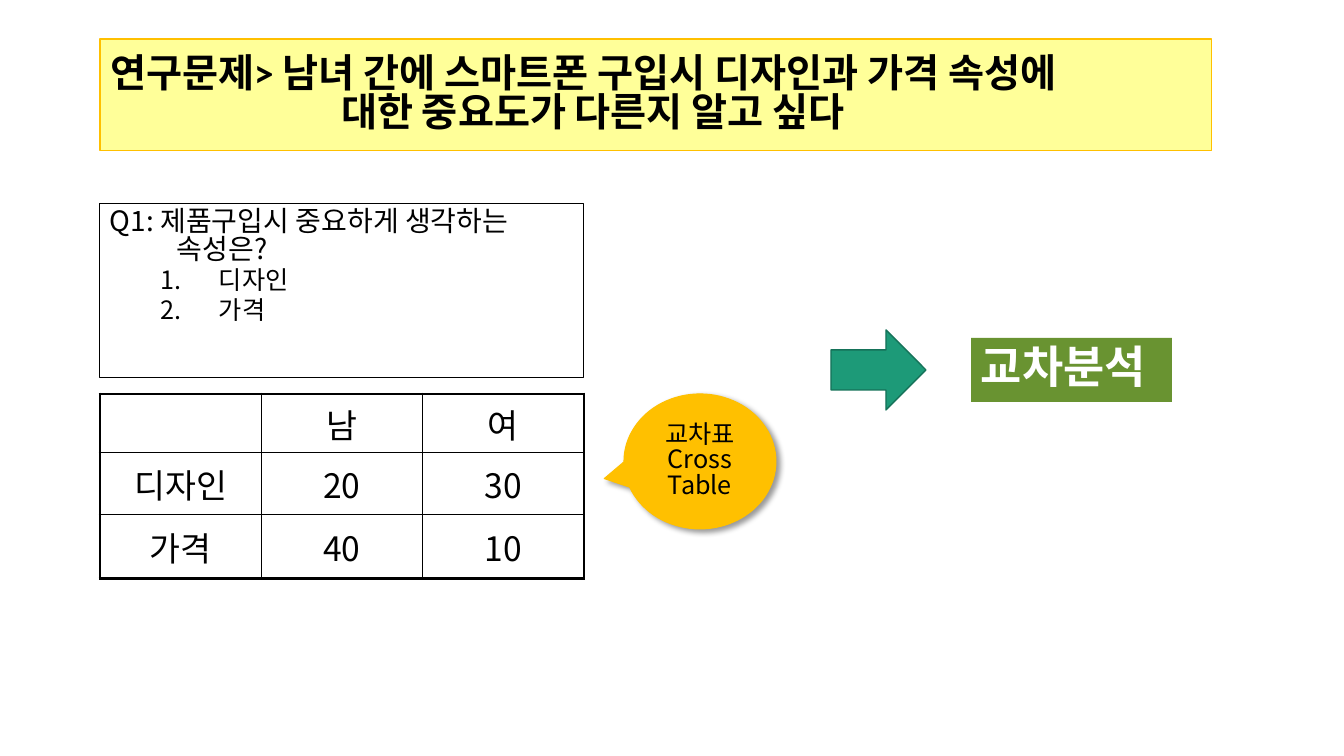
from lxml.etree import SubElement
from pptx import Presentation
from pptx.dml.color import RGBColor
from pptx.enum.shapes import MSO_SHAPE
from pptx.enum.text import MSO_ANCHOR, PP_ALIGN
from pptx.oxml.ns import qn
from pptx.util import Emu, Pt

PX = 914400 / 100.8
KOREAN = "Noto Sans CJK KR"


def px(length):
    return Emu(round(length * PX))


def color(value):
    return RGBColor.from_string(value)


def child(parent, tag, **attributes):
    return SubElement(parent, qn(tag), {key: str(value) for key, value in attributes.items()})


def write(para, text, size=18, font=KOREAN, ink="000000", bold=False, align=PP_ALIGN.LEFT,
          before=0, spacing=None, margin=0, hanging=0, numbered=False):
    para.alignment = align
    para.space_before = Pt(before)
    para.line_spacing = spacing
    properties = para._p.get_or_add_pPr()
    properties.set("marL", str(px(margin)))
    properties.set("indent", str(-px(hanging)))
    if numbered:
        child(properties, "a:buAutoNum", type="arabicPeriod")
    else:
        child(properties, "a:buNone")
    for index, line in enumerate(text.split("\n")):
        if index:
            para.add_line_break()
        span = para.add_run()
        span.text = line
        span.font.size = Pt(size)
        span.font.bold = bold
        span.font.name = font
        span.font.color.rgb = color(ink)
        child(span._r.get_or_add_rPr(), "a:ea", typeface=KOREAN)


class SlideBuilder:
    def __init__(self, deck):
        self.page = deck.slides.add_slide(deck.slide_layouts[5])

    def paint(self, box, fill=None, line=None, width=0.75):
        if fill:
            box.fill.solid()
            box.fill.fore_color.rgb = color(fill)
        else:
            box.fill.background()
        if line:
            box.line.color.rgb = color(line)
            box.line.width = Pt(width)
        else:
            box.line.fill.background()

    def title(self, text, left, top, width, height, fill, line, **style):
        box = self.page.shapes.title
        box.left, box.top, box.width, box.height = map(px, (left, top, width, height))
        self.paint(box, fill, line)
        box.text_frame.word_wrap = True
        box.text_frame.vertical_anchor = MSO_ANCHOR.MIDDLE
        write(box.text_frame.paragraphs[0], text, **style)

    def shape(self, kind, left, top, width, height, fill=None, line=None, weight=0.75):
        box = self.page.shapes.add_shape(kind, *map(px, (left, top, width, height)))
        box.shadow.inherit = False
        self.paint(box, fill, line, weight)
        return box

    def text(self, box, entries, anchor=MSO_ANCHOR.TOP, wrap=True):
        frame = box.text_frame
        frame.word_wrap = wrap
        frame.vertical_anchor = anchor
        for index, (text, style) in enumerate(entries):
            para = frame.add_paragraph() if index else frame.paragraphs[0]
            write(para, text, **style)

    def shadow(self, box, ink, opacity, blur, distance, angle):
        effects = box._element.spPr.find(qn("a:effectLst"))
        outer = child(effects, "a:outerShdw", blurRad=Pt(blur), dist=Pt(distance),
                      dir=angle * 60000, algn="tl", rotWithShape=0)
        child(child(outer, "a:srgbClr", val=ink), "a:alpha", val=opacity * 1000)

    def border(self, cell, side, width):
        edge = child(cell._tc.get_or_add_tcPr(), f"a:ln{side}", w=Pt(width))
        child(child(edge, "a:solidFill"), "a:srgbClr", val="000000")

    def table(self, rows, left, top, width, heights, outer, inner, **style):
        last_row, last_column = len(rows) - 1, len(rows[0]) - 1
        frame = self.page.shapes.add_table(len(rows), len(rows[0]),
                                           *map(px, (left, top, width, sum(heights))))
        grid = frame.table
        grid.first_row = grid.horz_banding = False
        for row, height in zip(grid.rows, heights):
            row.height = px(height)
        for r, values in enumerate(rows):
            for c, value in enumerate(values):
                cell = grid.cell(r, c)
                cell.vertical_anchor = MSO_ANCHOR.MIDDLE
                if value:
                    write(cell.text_frame.paragraphs[0], value, **style)
                edges = {"L": c == 0, "R": c == last_column, "T": r == 0, "B": r == last_row}
                for side, outside in edges.items():
                    self.border(cell, side, outer if outside else inner)
                cell.fill.background()


def main():
    deck = Presentation()
    deck.slide_width, deck.slide_height = px(1344), px(756)
    slide = SlideBuilder(deck)

    slide.title("연구문제> 남녀 간에 스마트폰 구입시 디자인과 가격 속성에\n대한 중요도가 다른지 알고 싶다",
                100, 39, 1112, 112, "FFFF99", "FFC000", size=28, font="Calibri",
                bold=True, spacing=0.83, margin=231, hanging=231)

    slide.table([["", "남", "여"], ["디자인", "20", "30"], ["가격", "40", "10"]],
                100, 394, 484, [58, 62, 64], outer=2.25, inner=1,
                size=24, align=PP_ALIGN.CENTER)

    question = slide.shape(MSO_SHAPE.RECTANGLE, 100, 204, 484, 174, line="000000")
    option = {"before": 3.6, "spacing": 0.83, "margin": 109, "hanging": 58, "numbered": True}
    slide.text(question, [
        ("Q1: 제품구입시 중요하게 생각하는 속성은?",
         {"size": 20, "spacing": 0.83, "margin": 67, "hanging": 67}),
        ("디자인", option),
        ("가격", option),
    ])

    callout = slide.shape(MSO_SHAPE.OVAL_CALLOUT, 624, 394, 152, 135, "FFC000", "FFC000")
    callout.adjustments[0], callout.adjustments[1] = -0.63, 0.127
    slide.shadow(callout, "000000", opacity=40, blur=4, distance=3, angle=45)
    centered = {"align": PP_ALIGN.CENTER, "spacing": 0.83}
    slide.text(callout, [(word, centered) for word in ("교차표", "Cross", "Table")],
               anchor=MSO_ANCHOR.MIDDLE)

    arrow = slide.shape(MSO_SHAPE.RIGHT_ARROW, 831, 330, 95, 80, "1D9A78", "157259", 1)
    method = slide.shape(MSO_SHAPE.RECTANGLE, 971, 338, 201, 64, "699331")
    slide.text(method, [("교차분석", {"size": 32, "font": "Calibri", "ink": "FFFFFF",
                                  "bold": True, "spacing": 0.83})],
               anchor=MSO_ANCHOR.MIDDLE, wrap=False)
    slide.page.shapes.add_group_shape([arrow, method])

    deck.save("out.pptx")


if __name__ == "__main__":
    main()
